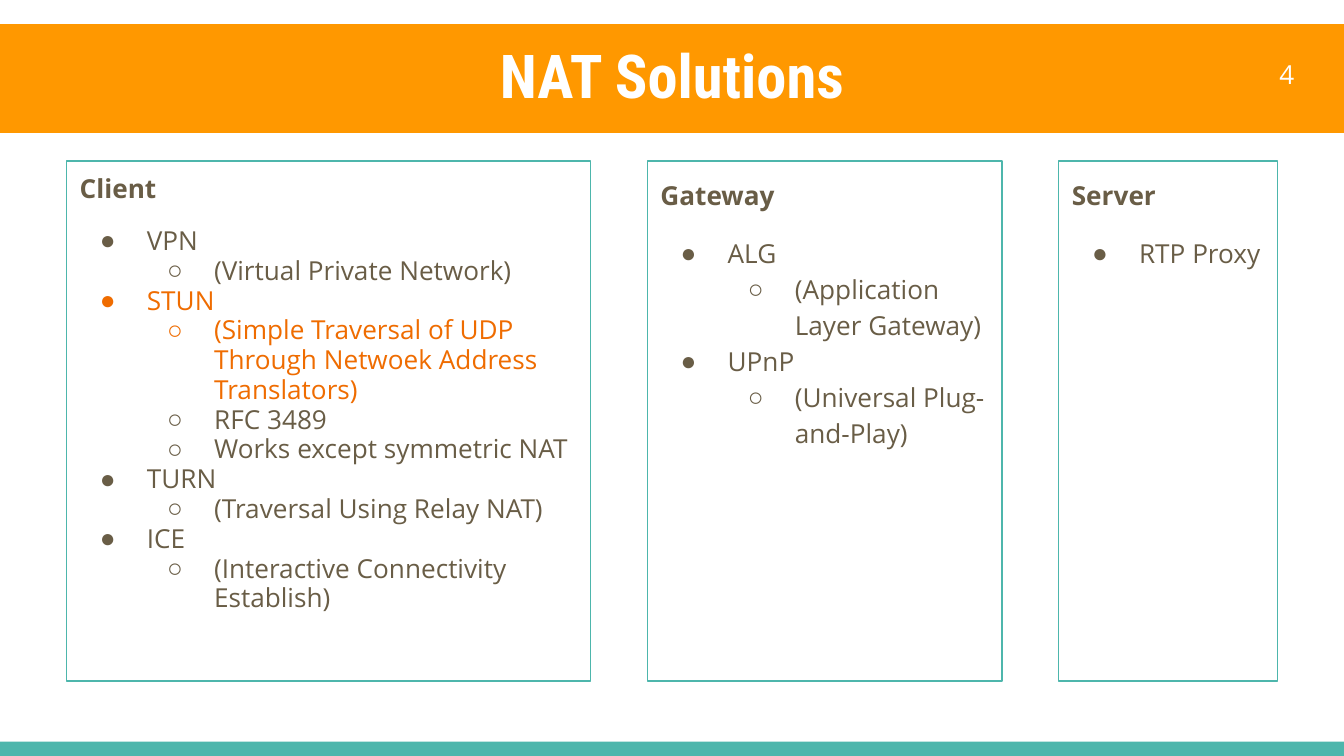
import pptx
import pptx.util
import pptx.dml.color
import pptx.enum.shapes
import pptx.enum.text
import pptx.oxml.ns
import lxml.etree

WIDE = pptx.util.Inches(10)
HIGH = WIDE * 9 // 16
HUES = {"teal": "4DB6AC", "band": "FF9800", "ink": "695D46", "mark": "EF6C00", "white": "FFFFFF"}
ALIGN = pptx.enum.text.PP_ALIGN
ANCHOR = pptx.enum.text.MSO_ANCHOR

CARDS = [
    ("Client", 39, 0.95, [
        (0, "VPN", "ink"),
        (1, "(Virtual Private Network)", "ink"),
        (0, "STUN", "mark"),
        (1, "(Simple Traversal of UDP Through Netwoek Address Translators)", "mark"),
        (1, "RFC 3489", "ink"),
        (1, "Works except symmetric NAT", "ink"),
        (0, "TURN", "ink"),
        (1, "(Traversal Using Relay NAT)", "ink"),
        (0, "ICE", "ink"),
        (1, "(Interactive Connectivity Establish)", "ink"),
    ]),
    ("Gateway", 26.4, 1.15, [
        (0, "ALG", "ink"),
        (1, "(Application Layer Gateway)", "ink"),
        (0, "UPnP", "ink"),
        (1, "(Universal Plug-and-Play)", "ink"),
    ]),
    ("Server", 16.3, 1.15, [(0, "RTP Proxy", "ink")]),
]


def tint(name):
    """Return the named colour."""
    return pptx.dml.color.RGBColor.from_string(HUES[name])


def place(box):
    """Turn a box in percent of the slide into lengths."""
    left, top, width, height = box
    return [round(part * side / 100) for part, side in
            ((left, WIDE), (top, HIGH), (width, WIDE), (height, HIGH))]


def panel(slide, box, fill=None, line=None):
    """Add a rectangle with an optional fill and outline."""
    shape = slide.shapes.add_shape(pptx.enum.shapes.MSO_SHAPE.RECTANGLE, *place(box))
    shape.shadow.inherit = False
    if fill:
        shape.fill.solid()
        shape.fill.fore_color.rgb = tint(fill)
    else:
        shape.fill.background()
    if line:
        shape.line.color.rgb = tint(line)
        shape.line.width = pptx.util.Pt(0.75)
    else:
        shape.line.fill.background()
    return shape


def frame(shape, anchor):
    """Prepare the text frame of a shape."""
    text = shape.text_frame
    text.word_wrap = True
    text.vertical_anchor = anchor
    text.margin_left = text.margin_right = pptx.util.Inches(0.1)
    text.margin_top = text.margin_bottom = pptx.util.Inches(0.1)
    return text


def write(para, text, hue, size=14, face="Open Sans", bold=False, align=ALIGN.LEFT):
    """Fill a paragraph and format its run."""
    para.text = text
    para.alignment = align
    font = para.runs[0].font
    font.name, font.size, font.bold = face, pptx.util.Pt(size), bold
    font.color.rgb = tint(hue)


def bullet(para, level, hue):
    """Indent a paragraph and give it a coloured bullet."""
    para.level = level
    props = para._p.get_or_add_pPr()
    props.set("marL", str(pptx.util.Inches(0.5 * (level + 1))))
    props.set("indent", str(pptx.util.Inches(-0.35)))
    name = pptx.oxml.ns.qn
    shade = lxml.etree.SubElement(props, name("a:buClr"))
    lxml.etree.SubElement(shade, name("a:srgbClr"), val=HUES[hue])
    lxml.etree.SubElement(props, name("a:buFont"), typeface="Arial")
    lxml.etree.SubElement(props, name("a:buChar"), char="●○"[level])


def header(slide, box, title, number):
    """Draw the title band with the page number at its right."""
    left, top, width, height = box
    text = frame(panel(slide, box, fill="band"), ANCHOR.TOP)
    write(text.paragraphs[0], title, "white", 32.4, "Roboto Condensed", True, ALIGN.CENTER)
    spot = (left + 0.913 * width, top + 0.19 * height, 0.06 * width, 0.53 * height)
    label = slide.shapes.add_textbox(*place(spot))
    write(frame(label, ANCHOR.MIDDLE).paragraphs[0], number, "white", align=ALIGN.RIGHT)


def card(slide, box, head, space, items):
    """Draw an outlined card with a heading and a bullet list."""
    text = frame(panel(slide, box, line="teal"), ANCHOR.TOP)
    para = text.paragraphs[0]
    write(para, head, "ink", bold=True)
    para.line_spacing = space
    for index, (level, words, hue) in enumerate(items):
        para = text.add_paragraph()
        write(para, words, hue)
        para.line_spacing = space
        para.space_before = pptx.util.Pt(0 if index else 12)
        bullet(para, level, hue)


def row(slide, box, gap):
    """Set the cards side by side from the left edge of the box."""
    left, top, height = box
    for head, width, space, items in CARDS:
        card(slide, (left, top, width, height), head, space, items)
        left += width + gap


def main():
    """Build and save the slide."""
    deck = pptx.Presentation()
    deck.slide_width, deck.slide_height = WIDE, HIGH
    slide = deck.slides.add_slide(deck.slide_layouts[6])
    panel(slide, (0, 98.1, 100, 1.9), fill="teal")
    header(slide, (0, 3.2, 100, 14.4), "NAT Solutions", "4")
    row(slide, (4.95, 21.3, 68.8), 4.21)
    deck.save("out.pptx")


if __name__ == "__main__":
    main()
